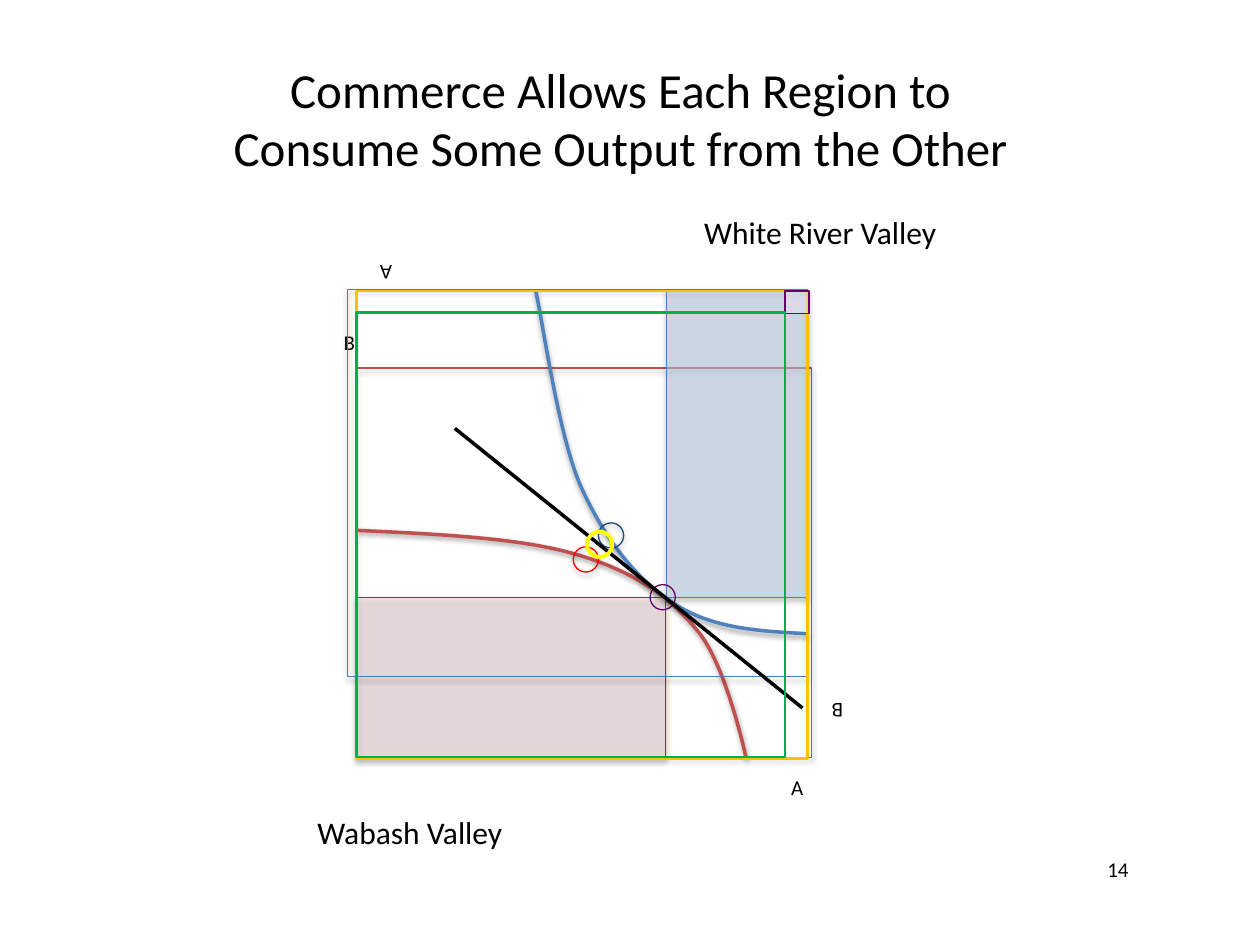
from lxml.etree import SubElement
from pptx import Presentation
from pptx.dml.color import RGBColor
from pptx.enum.shapes import MSO_CONNECTOR, MSO_SHAPE
from pptx.enum.text import MSO_ANCHOR, MSO_AUTO_SIZE, PP_ALIGN
from pptx.oxml.ns import qn
from pptx.util import Inches, Pt

FONT = "Calibri"
DOT = 0.2


def rgb(color):
    """Turn a hex string into a colour."""
    return RGBColor.from_string(color)


def add_alpha(color_el, percent):
    """Set the opacity of a colour element."""
    SubElement(color_el, qn("a:alpha")).set("val", str(percent * 1000))


def add_shadow(sp, opacity=35, dist=1.8):
    """Give a shape a soft shadow below it."""
    effects = sp._element.spPr.find(qn("a:effectLst"))
    shadow = SubElement(effects, qn("a:outerShdw"), blurRad=str(Pt(3.1)),
                        dist=str(Pt(dist)), dir="5400000", rotWithShape="0")
    add_alpha(SubElement(shadow, qn("a:srgbClr"), val="000000"), opacity)


def add_outline(s, kind, x, y, w, h, line, width=0.75, fill=None, opacity=50, shadow=False):
    """Add an outlined shape, optionally with a translucent fill."""
    sp = s.shapes.add_shape(kind, Inches(x), Inches(y), Inches(w), Inches(h))
    sp.shadow.inherit = False
    sp.line.color.rgb = rgb(line)
    sp.line.width = Pt(width)
    if fill:
        sp.fill.solid()
        sp.fill.fore_color.rgb = rgb(fill)
        add_alpha(sp._element.spPr.find(qn("a:solidFill"))[0], opacity)
    else:
        sp.fill.background()
    if shadow:
        add_shadow(sp)
    return sp


def add_box(s, x, y, w, h, line, **style):
    """Add a rectangle."""
    return add_outline(s, MSO_SHAPE.RECTANGLE, x, y, w, h, line, **style)


def add_dot(s, x, y, line, **style):
    """Add a small open circle."""
    return add_outline(s, MSO_SHAPE.OVAL, x, y, DOT, DOT, line, **style)


def write(sp, lines, size, align=PP_ALIGN.LEFT):
    """Fill a shape with one paragraph a line."""
    tf = sp.text_frame
    tf.word_wrap = True
    tf.auto_size = MSO_AUTO_SIZE.SHAPE_TO_FIT_TEXT
    tf.vertical_anchor = MSO_ANCHOR.TOP
    tf.text = "\n".join(lines)
    for p in tf.paragraphs:
        p.alignment = align
        p.font.name = FONT
        p.font.size = Pt(size)
        p.font.color.rgb = rgb("000000")


def add_text(s, x, y, w, h, lines, size, align=PP_ALIGN.LEFT, rotation=0):
    """Add a text box."""
    sp = s.shapes.add_textbox(Inches(x), Inches(y), Inches(w), Inches(h))
    sp.rotation = rotation
    write(sp, lines, size, align)


def add_curve(s, x, y, knots, line):
    """Draw joined cubic curves through knots measured from x, y."""
    start, *rest = [(Inches(x + px), Inches(y + py)) for px, py in knots]
    builder = s.shapes.build_freeform(*start)
    builder.add_line_segments(rest, close=False)
    sp = builder.convert_to_shape()
    outline = next(sp._element.iter(qn("a:path")))
    segments = outline.findall(qn("a:lnTo"))
    for i in range(0, len(segments), 3):
        cubic = SubElement(outline, qn("a:cubicBezTo"))
        for segment in segments[i:i + 3]:
            cubic.append(segment[0])
            outline.remove(segment)
    sp.shadow.inherit = False
    sp.fill.background()
    sp.line.color.rgb = rgb(line)
    sp.line.width = Pt(2)
    add_shadow(sp, 38, 1.6)


def add_title(s, x, y, w, h):
    """Place the centred title."""
    add_text(s, x, y, w, h, ["Commerce Allows Each Region to",
                             "Consume Some Output from the Other"], 28, PP_ALIGN.CENTER)


def add_region_names(s, x, y):
    """Name the two regions at opposite corners."""
    add_text(s, x - 0.41, y + 4.1, 1.83, 0.42, ["Wabash Valley"], 18)
    add_text(s, x + 2.66, y - 0.66, 2.13, 0.4, ["White River Valley"], 18)


def add_wabash(s, x, y):
    """Place the Wabash Valley axes, frontier and consumption."""
    for name, dx, dy, w in (("B", -0.2, 0.27, 0.57), ("A", 3.35, 3.8, 0.66)):
        write(add_box(s, x + dx, y + dy, w, 0.3, "FFFFFF"), [name], 12)
    add_box(s, x, y + 0.62, 3.61, 3.09, "C0504D", shadow=True)
    add_curve(s, x, y, [(0.01, 1.91), (0.65, 1.94), (1.3, 1.97), (1.74, 2.1),
                        (2.19, 2.23), (2.48, 2.43), (2.7, 2.7),
                        (2.93, 2.96), (3.09, 3.71), (3.09, 3.71)], "C0504D")
    add_dot(s, x + 1.72, y + 2.04, "FF0000", shadow=True)
    add_box(s, x, y + 2.44, 2.45, 1.28, "FF0000", fill="F2DCDB", shadow=True)


def add_white_river(s, x, y):
    """Place the White River Valley axes, frontier and consumption, turned over."""
    add_box(s, x - 0.07, y, 3.64, 3.07, "4B7EBC", shadow=True)
    for name, dx, dy, w in (("A", -0.23, -0.28, 0.61), ("B", 3.37, 3.2, 0.59)):
        add_text(s, x + dx, y + dy, w, 0.3, [name], 12, rotation=180)
    add_curve(s, x, y, [(3.58, 2.73), (3.2, 2.71), (2.82, 2.69), (2.52, 2.49),
                        (2.22, 2.3), (1.97, 1.98), (1.78, 1.56),
                        (1.6, 1.15), (1.48, 0.26), (1.42, 0)], "4F81BD")
    add_dot(s, x + 1.92, y + 1.85, "1F497D", shadow=True)
    add_box(s, x + 2.46, y, 1.12, 2.44, "4B7EBC", fill="C6D9F1", shadow=True)


def add_price(s, x, y):
    """Place the tangent point and the price line through it."""
    add_dot(s, x + 2.33, y + 2.34, "660066")
    price = s.shapes.add_connector(MSO_CONNECTOR.STRAIGHT, Inches(x + 0.78), Inches(y + 1.1),
                                   Inches(x + 3.54), Inches(y + 3.32))
    price.line.color.rgb = rgb("000000")
    price.line.width = Pt(2)
    SubElement(price._element.spPr, qn("a:effectLst"))


def add_output(s, x, y):
    """Place the joint output, the trading cost and what remains."""
    add_box(s, x, y + 0.01, 3.58, 3.71, "FFC000", width=1.5)
    add_box(s, x + 3.4, y + 0.01, 0.19, 0.18, "660066", fill="E6E0EC", opacity=49)
    add_box(s, x, y + 0.18, 3.4, 3.53, "00B050", width=1.5)
    add_dot(s, x + 1.83, y + 1.92, "FFFF00", width=2.25)


def main():
    """Build and save the slide."""
    prs = Presentation()
    prs.slide_width, prs.slide_height = Inches(10), Inches(7.5)
    s = prs.slides.add_slide(prs.slide_layouts[6])
    x, y = 2.83, 2.3
    add_text(s, 8.69, 6.75, 0.56, 0.3, ["14"], 12)
    for add_part in (add_region_names, add_wabash, add_white_river, add_price):
        add_part(s, x, y)
    add_title(s, 1.06, 0.42, 7.73, 1.04)
    add_output(s, x, y)
    prs.save("out.pptx")


if __name__ == "__main__":
    main()
